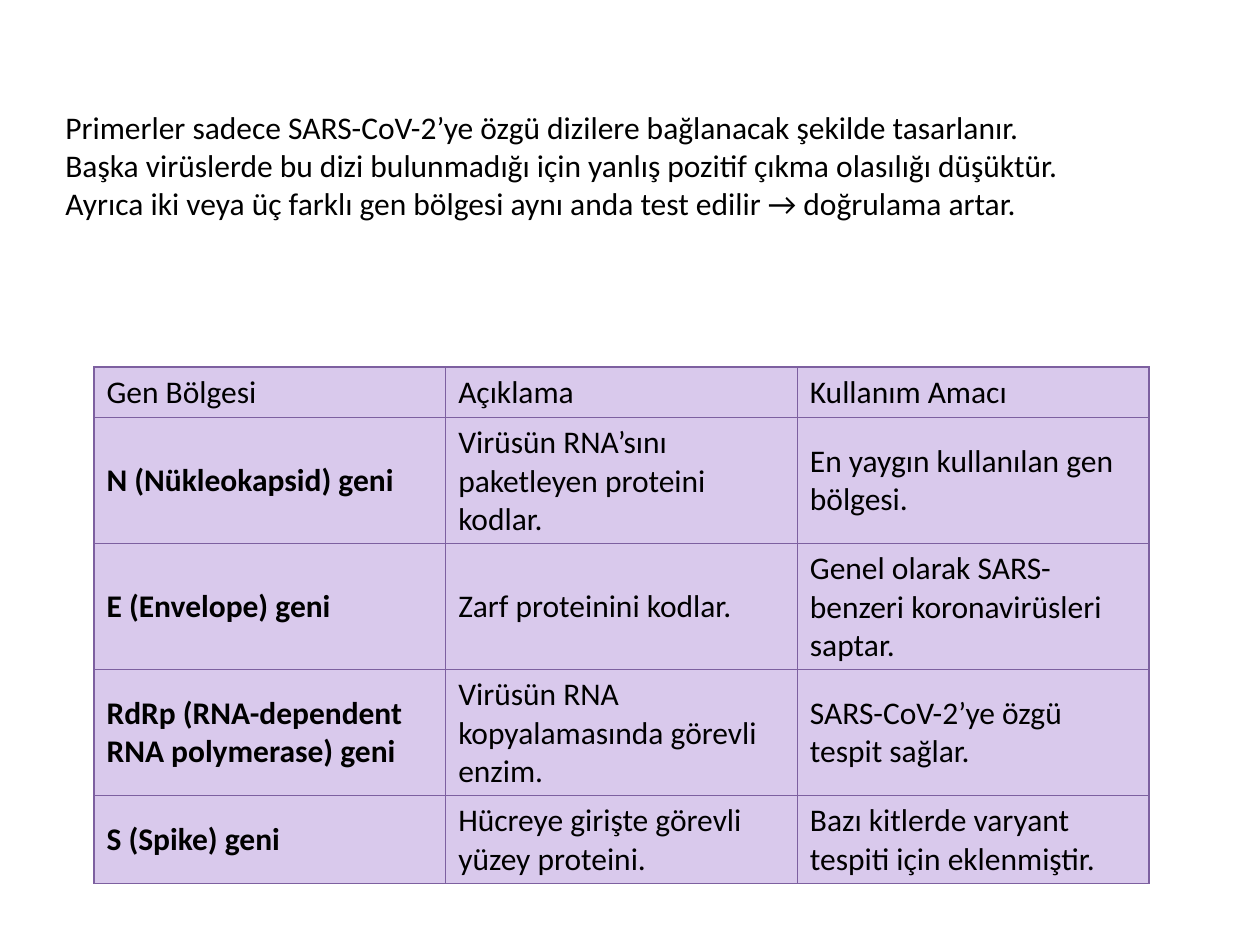
import lxml.etree
import pptx
import pptx.dml.color
import pptx.enum.text
import pptx.oxml.ns
import pptx.util

BLACK = pptx.dml.color.RGBColor(0x00, 0x00, 0x00)
LILAC = pptx.dml.color.RGBColor(0xD9, 0xC9, 0xEC)
PURPLE = pptx.dml.color.RGBColor(0x7D, 0x60, 0xA0)

SCALE = 914400 / 126
FONT = {"name": "Calibri", "size": pptx.util.Pt(18), "bold": False}

NOTES = [
    "Primerler sadece SARS-CoV-2’ye özgü dizilere bağlanacak şekilde tasarlanır.",
    "Başka virüslerde bu dizi bulunmadığı için yanlış pozitif çıkma olasılığı düşüktür.",
    "Ayrıca iki veya üç farklı gen bölgesi aynı anda test edilir → doğrulama artar.",
]
GENES = [
    ("Gen Bölgesi", "Açıklama", "Kullanım Amacı"),
    ("N (Nükleokapsid) geni", "Virüsün RNA’sını paketleyen proteini kodlar.",
     "En yaygın kullanılan gen bölgesi."),
    ("E (Envelope) geni", "Zarf proteinini kodlar.",
     "Genel olarak SARS-benzeri koronavirüsleri saptar."),
    ("RdRp (RNA-dependent RNA polymerase) geni",
     "Virüsün RNA kopyalamasında görevli enzim.",
     "SARS-CoV-2’ye özgü tespit sağlar."),
    ("S (Spike) geni", "Hücreye girişte görevli yüzey proteini.",
     "Bazı kitlerde varyant tespiti için eklenmiştir."),
]


def px(count):
    return pptx.util.Emu(round(count * SCALE))


class Page:
    def __init__(self, slide, font):
        self.slide = slide
        self.font = font

    def fill(self, para, text, **extra):
        """Put styled text into a paragraph."""
        para.text = text
        for key, value in {**self.font, **extra}.items():
            setattr(para.font, key, value)
        para.font.color.rgb = BLACK

    def text(self, box, lines, top):
        """Add lines of text, starting top px below the edge of the box."""
        frame = self.slide.shapes.add_textbox(*map(px, box)).text_frame
        frame.word_wrap = True
        frame.margin_top = px(top)
        for index, line in enumerate(lines):
            para = frame.add_paragraph() if index else frame.paragraphs[0]
            self.fill(para, line)

    def edge(self, cell):
        """Draw a thin line on all four sides of a cell."""
        props = cell._tc.get_or_add_tcPr()
        qn = pptx.oxml.ns.qn
        for side in ("a:lnL", "a:lnR", "a:lnT", "a:lnB"):
            line = lxml.etree.SubElement(props, qn(side), w=str(pptx.util.Pt(0.75)))
            fill = lxml.etree.SubElement(line, qn("a:solidFill"))
            lxml.etree.SubElement(fill, qn("a:srgbClr"), val=str(PURPLE))

    def table(self, left, top, width, heights, rows):
        """Add a table of equal columns, with bold names below the header."""
        count = len(rows[0])
        box = map(px, (left, top, width, sum(heights)))
        table = self.slide.shapes.add_table(len(rows), count, *box).table
        for column in table.columns:
            column.width = px(width / count)
        for r, (height, row) in enumerate(zip(heights, rows)):
            table.rows[r].height = px(height)
            for c, text in enumerate(row):
                cell = table.cell(r, c)
                cell.vertical_anchor = pptx.enum.text.MSO_ANCHOR.MIDDLE
                self.edge(cell)
                cell.fill.solid()
                cell.fill.fore_color.rgb = LILAC
                self.fill(cell.text_frame.paragraphs[0], text,
                          bold=r > 0 and c == 0)


def main():
    deck = pptx.Presentation()
    deck.slide_width, deck.slide_height = px(1260), px(945)
    page = Page(deck.slides.add_slide(deck.slide_layouts[6]), FONT)
    page.text((53, 63, 1102, 318), NOTES, 45)
    page.table(94, 367, 1055, (49, 126, 126, 126, 88), GENES)
    deck.save("out.pptx")


if __name__ == "__main__":
    main()
